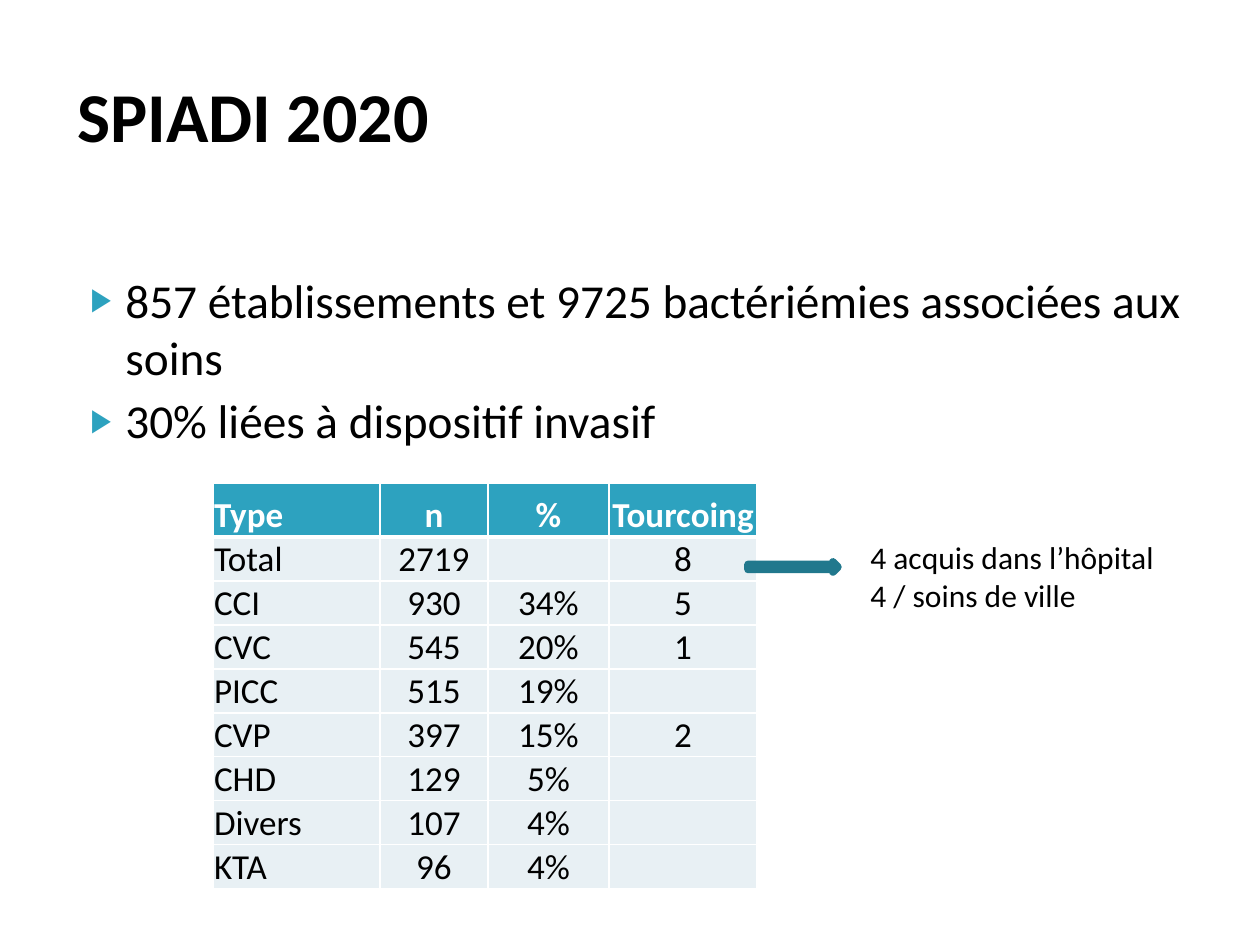
from dataclasses import dataclass

from lxml import etree
from pptx import Presentation
from pptx.dml.color import RGBColor
from pptx.enum.shapes import MSO_SHAPE
from pptx.enum.text import MSO_ANCHOR, PP_ALIGN
from pptx.oxml.ns import qn
from pptx.util import Pt

PX = 914400 / 126
RIGHT_ARROW = MSO_SHAPE.RIGHT_ARROW
TOP, MIDDLE, BOTTOM = MSO_ANCHOR.TOP, MSO_ANCHOR.MIDDLE, MSO_ANCHOR.BOTTOM
LEFT, CENTER = PP_ALIGN.LEFT, PP_ALIGN.CENTER


@dataclass(frozen=True)
class Theme:
    """Colours, font and type sizes of the slide."""
    font: str = "Calibri"
    text: str = "000000"
    white: str = "FFFFFF"
    accent: str = "2DA2BF"
    accent_dark: str = "21788D"
    band: str = "E8F0F4"
    title: int = 40
    body: int = 27
    cell: int = 20
    note: int = 18


THEME = Theme()
BULLETS = [
    "857 établissements et 9725 bactériémies associées aux soins",
    "30% liées à dispositif invasif",
]
NOTES = ["4 acquis dans l’hôpital", "4 / soins de ville"]
DEVICES = [
    ("Type", "n", "%", "Tourcoing"),
    ("Total", "2719", "", "8"),
    ("CCI", "930", "34%", "5"),
    ("CVC", "545", "20%", "1"),
    ("PICC", "515", "19%", ""),
    ("CVP", "397", "15%", "2"),
    ("CHD", "129", "5%", ""),
    ("Divers", "107", "4%", ""),
    ("KTA", "96", "4%", ""),
]
COLUMNS = [167, 108, 121, 148]
HEADER_HEIGHT, ROW_HEIGHT = 54, 44


def emu(px):
    """Turn px into EMU."""
    return round(px * PX)


def rgb(color):
    """Turn a hex string into a colour."""
    return RGBColor.from_string(color)


def add_run(p, text, size, color=THEME.text, bold=False):
    """Add one styled run to a paragraph."""
    r = p.add_run()
    r.text = text
    r.font.name = THEME.font
    r.font.size = Pt(size)
    r.font.bold = bold
    r.font.color.rgb = rgb(color)


def add_text(s, box, lines, size, anchor=TOP, bold=False):
    """Add a text box with one paragraph per line and return its paragraphs."""
    tf = s.shapes.add_textbox(*map(emu, box)).text_frame
    tf.word_wrap = True
    tf.vertical_anchor = anchor
    for i, line in enumerate(lines):
        p = tf.add_paragraph() if i else tf.paragraphs[0]
        add_run(p, line, size, bold=bold)
    return tf.paragraphs


def add_bullets(s, box):
    """Add the body text with triangle bullets."""
    for p in add_text(s, box, BULLETS, THEME.body):
        p.space_before = Pt(4)
        pPr = p._p.get_or_add_pPr()
        pPr.set("marL", str(emu(50)))
        pPr.set("indent", str(emu(-35)))
        color = etree.SubElement(pPr, qn("a:buClr"))
        etree.SubElement(color, qn("a:srgbClr"), val=THEME.accent)
        etree.SubElement(pPr, qn("a:buSzPct"), val="68000")
        etree.SubElement(pPr, qn("a:buFont"), typeface="Arial")
        etree.SubElement(pPr, qn("a:buChar"), char="▶")


def set_borders(cell, bottom):
    """Draw white cell borders, with the given bottom width in points."""
    tcPr = cell._tc.get_or_add_tcPr()
    widths = {"a:lnL": 1, "a:lnR": 1, "a:lnT": 1, "a:lnB": bottom}
    for i, (tag, width) in enumerate(widths.items()):
        ln = etree.Element(qn(tag), w=str(Pt(width)))
        fill = etree.SubElement(ln, qn("a:solidFill"))
        etree.SubElement(fill, qn("a:srgbClr"), val=THEME.white)
        tcPr.insert(i, ln)


def fill_cell(cell, text, header, align):
    """Style one table cell and write its text."""
    cell.fill.solid()
    cell.fill.fore_color.rgb = rgb(THEME.accent if header else THEME.band)
    cell.vertical_anchor = BOTTOM
    cell.margin_left = cell.margin_right = cell.margin_top = emu(1)
    cell.margin_bottom = 0
    set_borders(cell, 3 if header else 1)
    p = cell.text_frame.paragraphs[0]
    p.alignment = align
    if text:
        add_run(p, text, THEME.cell, THEME.white if header else THEME.text, header)


def add_devices(s, left, top):
    """Add the table of bacteraemia by device type."""
    heights = [HEADER_HEIGHT] + [ROW_HEIGHT] * (len(DEVICES) - 1)
    box = (left, top, sum(COLUMNS), sum(heights))
    table = s.shapes.add_table(len(DEVICES), len(COLUMNS), *map(emu, box)).table
    for column, width in zip(table.columns, COLUMNS):
        column.width = emu(width)
    for i, (height, values) in enumerate(zip(heights, DEVICES)):
        table.rows[i].height = emu(height)
        for j, text in enumerate(values):
            fill_cell(table.cell(i, j), text, i == 0, CENTER if j else LEFT)


def add_arrow(s, box):
    """Add the block arrow from the total to its note."""
    sp = s.shapes.add_shape(RIGHT_ARROW, *map(emu, box))
    sp.shadow.inherit = False
    sp.fill.solid()
    sp.fill.fore_color.rgb = rgb(THEME.accent)
    sp.line.color.rgb = rgb(THEME.accent_dark)
    sp.line.width = Pt(4.33)


def main():
    """Build and save the slide."""
    prs = Presentation()
    prs.slide_width, prs.slide_height = emu(1260), emu(945)
    s = prs.slides.add_slide(prs.slide_layouts[6])
    add_bullets(s, (63, 265, 1134, 563))
    add_text(s, (65, 36, 1134, 157), ["SPIADI 2020"], THEME.title, MIDDLE, True)
    add_devices(s, 213, 483)
    add_arrow(s, (748, 562, 90, 10))
    add_text(s, (858, 532, 318, 89), NOTES, THEME.note)
    prs.save("out.pptx")


if __name__ == "__main__":
    main()
